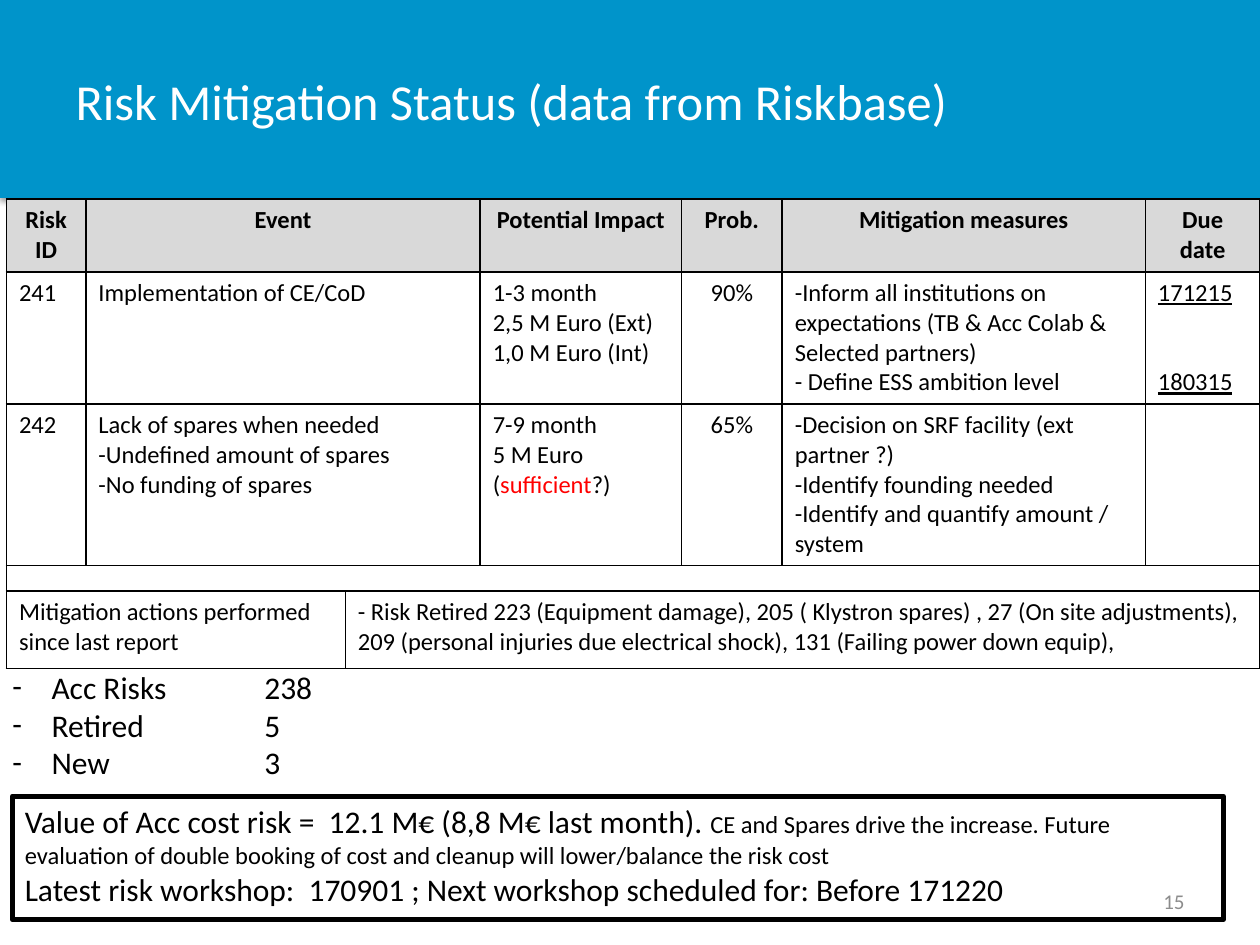
from lxml import etree
from pptx import Presentation, util as u
from pptx.dml.color import RGBColor
from pptx.enum import shapes, text
from pptx.oxml import ns

COLORS = {"banner": "0094CA", "white": "FFFFFF", "black": "000000",
          "header": "D9D9D9", "alert": "FF0000", "number": "8C8C8C"}
COLUMN_WIDTHS = [1.6, 5.23, 2.72, 4.06, 2.03, 7.32, 2.31]
ROW_HEIGHTS = [1.47, 2.66, 3.26, 0.5, 1.57]
MERGES = [(0, 1, 2), (1, 1, 2), (2, 1, 2), (3, 0, 6), (4, 0, 1), (4, 2, 6)]
HEADINGS = {0: "Risk ID", 1: "Event", 3: "Potential Impact", 4: "Prob.",
            5: "Mitigation measures", 6: "Due date"}
RISKS = [
    {0: ["241"], 1: ["Implementation of CE/CoD"],
     3: ["1-3 month", "2,5 M Euro (Ext)", "1,0 M Euro (Int)"], 4: ["90%"],
     5: ["-Inform all institutions on expectations (TB & Acc Colab & Selected partners)",
         "- Define ESS ambition level"],
     6: ["171215", "180315"]},
    {0: ["242"],
     1: ["Lack of spares when needed", "-Undefined amount of spares", "-No funding of spares"],
     3: ["7-9 month", [("5 M Euro (", {}), ("sufficient", {"color": "alert"}), ("?)", {})]],
     4: ["65%"],
     5: ["-Decision on SRF facility (ext partner ?)", "-Identify founding needed",
         "-Identify and quantify amount / system"]},
]
ACTIONS = {0: ["Mitigation actions performed since last report"],
           2: ["- Risk Retired 223 (Equipment damage), 205 ( Klystron spares) , "
               "27 (On site adjustments), 209 (personal injuries due electrical shock), "
               "131 (Failing power down equip),"]}
COUNTS = [("Acc Risks", 238), ("Retired", 5), ("New", 3)]
SUMMARY = [
    [("Value of Acc cost risk =  12.1 M€ (8,8 M€ last month). ", {}),
     ("CE and Spares drive the increase. Future evaluation of double booking of cost "
      "and cleanup will lower/balance the risk cost", {"size": u.Pt(14)})],
    "Latest risk workshop:  170901 ; Next workshop scheduled for: Before 171220",
]


def rgb(name):
    """Return the named colour."""
    return RGBColor.from_string(COLORS[name])


def add_xml(parent, tag, **attributes):
    """Append a DrawingML element to a parent and return it."""
    return etree.SubElement(parent, ns.qn(tag), attributes)


def write(frame, paragraphs, size, align=text.PP_ALIGN.LEFT, **style):
    """Fill a text frame with paragraphs of plain or mixed runs."""
    for index, content in enumerate(paragraphs):
        paragraph = frame.add_paragraph() if index else frame.paragraphs[0]
        paragraph.alignment = align
        runs = [(content, {})] if isinstance(content, str) else content
        for wording, changes in runs:
            run = paragraph.add_run()
            run.text = wording
            look = {"name": "Calibri", "size": u.Pt(size), "color": "black", **style, **changes}
            run.font.color.rgb = rgb(look.pop("color"))
            for name, value in look.items():
                setattr(run.font, name, value)


def place(shape, box):
    """Move and size a shape to a box in centimetres."""
    for name, value in zip(("left", "top", "width", "height"), box):
        setattr(shape, name, u.Cm(value))


def add_banner(slide, box):
    """Draw the shadowed banner and set the title over it."""
    left, top, width, height = box
    banner = slide.shapes.add_shape(shapes.MSO_SHAPE.RECTANGLE, *map(u.Cm, box))
    banner.fill.solid()
    banner.fill.fore_color.rgb = rgb("banner")
    banner.line.fill.background()
    banner.shadow.inherit = False
    effects = banner._element.spPr.find(ns.qn("a:effectLst"))
    shadow = add_xml(effects, "a:outerShdw", blurRad=str(u.Pt(3.1)), dist=str(u.Pt(1.8)),
                     dir="5400000", rotWithShape="0")
    add_xml(add_xml(shadow, "a:srgbClr", val=COLORS["black"]), "a:alpha", val="35000")
    slide.shapes._spTree.insert(2, banner._element)

    title = slide.shapes.title
    place(title, (left + 1.27, top + 0.76, width - 5.56, height - 0.81))
    settings = {"auto_size": text.MSO_AUTO_SIZE.NONE, "word_wrap": True,
                "vertical_anchor": text.MSO_ANCHOR.MIDDLE, "margin_bottom": u.Cm(0.8)}
    for name, value in settings.items():
        setattr(title.text_frame, name, value)
    write(title.text_frame, ["Risk Mitigation Status (data from Riskbase)"], 28.8, color="white")


def add_page_number(slide, box):
    """Set the page number at the right of its box."""
    frame = slide.shapes.add_textbox(*map(u.Cm, box)).text_frame
    frame.word_wrap = True
    frame.vertical_anchor = text.MSO_ANCHOR.MIDDLE
    write(frame, ["15"], 12, text.PP_ALIGN.RIGHT, color="number")


def style_cell(cell, is_header):
    """Give a cell black borders and its fill."""
    properties = cell._tc.get_or_add_tcPr()
    for side in ("a:lnL", "a:lnR", "a:lnT", "a:lnB"):
        border = add_xml(properties, side, w=str(u.Pt(1)))
        add_xml(add_xml(border, "a:solidFill"), "a:srgbClr", val=COLORS["black"])
    if is_header:
        cell.fill.solid()
        cell.fill.fore_color.rgb = rgb("header")
    else:
        cell.fill.background()


def add_risk_table(slide, box):
    """Build the table of risks with its closing row of actions."""
    table = slide.shapes.add_table(len(ROW_HEIGHTS), len(COLUMN_WIDTHS), *map(u.Cm, box)).table
    table.first_row = table.horz_banding = False
    for column, width in zip(table.columns, COLUMN_WIDTHS):
        column.width = u.Cm(width)
    for row, height in zip(table.rows, ROW_HEIGHTS):
        row.height = u.Cm(height)
    for row, first, last in MERGES:
        table.cell(row, first).merge(table.cell(row, last))

    headings = {column: [heading] for column, heading in HEADINGS.items()}
    for row, contents in enumerate([headings, *RISKS, {}, ACTIONS]):
        for column in range(len(COLUMN_WIDTHS)):
            cell = table.cell(row, column)
            style_cell(cell, row == 0)
            if column in contents:
                centred = row == 0 or column == 4
                align = text.PP_ALIGN.CENTER if centred else text.PP_ALIGN.LEFT
                write(cell.text_frame, contents[column], 14, align,
                      bold=row == 0, underline=row > 0 and column == 6)
            else:
                add_xml(cell.text_frame.paragraphs[0]._p, "a:endParaRPr", sz="600")
    table.cell(1, 6).text_frame.paragraphs[1].space_before = u.Pt(34)


def add_counts(slide, box):
    """List the risk counts with dashes and a tab stop."""
    frame = slide.shapes.add_textbox(*map(u.Cm, box)).text_frame
    frame.word_wrap = False
    write(frame, [f"{label}\t{count}" for label, count in COUNTS], 18)
    for paragraph in frame.paragraphs:
        properties = paragraph._p.get_or_add_pPr()
        properties.set("marL", str(u.Cm(0.79)))
        properties.set("indent", str(u.Cm(-0.79)))
        add_xml(properties, "a:buFont", typeface="Calibri")
        add_xml(properties, "a:buChar", char="-")
        add_xml(add_xml(properties, "a:tabLst"), "a:tab", pos=str(u.Cm(5.08)), algn="l")


def add_summary(slide, box):
    """Frame the cost and workshop summary."""
    summary = slide.shapes.add_shape(shapes.MSO_SHAPE.RECTANGLE, *map(u.Cm, box))
    summary.shadow.inherit = False
    summary.fill.background()
    summary.line.color.rgb = rgb("black")
    summary.line.width = u.Pt(3)
    summary.text_frame.word_wrap = True
    summary.text_frame.vertical_anchor = text.MSO_ANCHOR.TOP
    write(summary.text_frame, SUMMARY, 18)


def main():
    """Build and save the risk status slide."""
    deck = Presentation()
    deck.slide_width, deck.slide_height = u.Cm(25.4), u.Cm(19.05)
    slide = deck.slides.add_slide(deck.slide_layouts[5])
    add_banner(slide, (0, 0, 25.4, 3.99))
    add_page_number(slide, (18.21, 17.65, 5.92, 1.02))
    add_risk_table(slide, (0.13, 4.01, sum(COLUMN_WIDTHS), sum(ROW_HEIGHTS)))
    add_summary(slide, (0.25, 16.05, 24.41, 2.49))
    add_counts(slide, (0, 13.34, 6.63, 3.33))
    deck.save("out.pptx")


if __name__ == "__main__":
    main()
